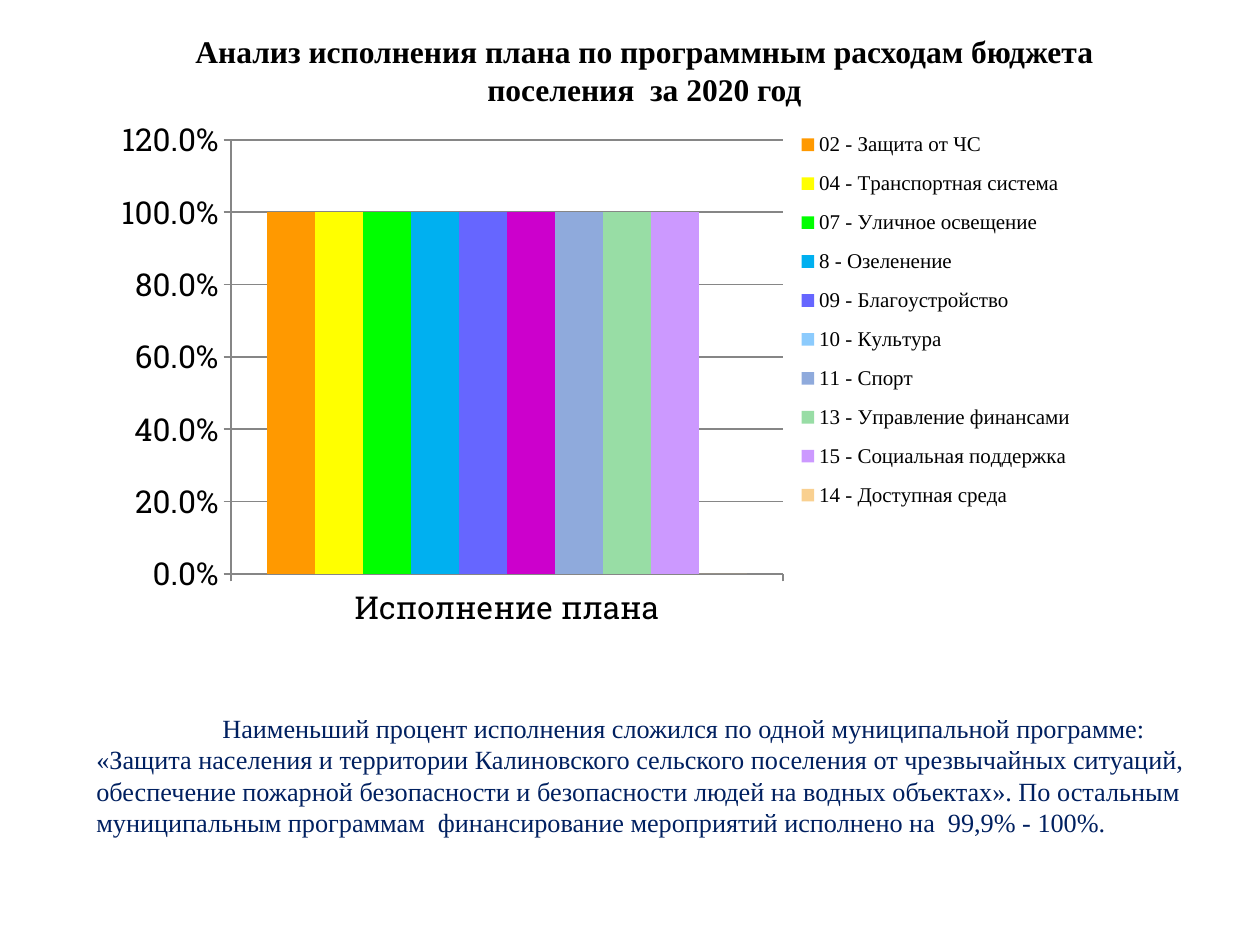
import pptx
import pptx.chart.data
import pptx.dml.color
import pptx.enum.chart
import pptx.enum.text
import pptx.oxml
import pptx.oxml.ns
import pptx.util

PX_PER_INCH = 126
SERIF = "Times New Roman"
SLAB = "Roboto Slab"
COLORS = {"black": "000000", "navy": "002060", "axis": "868686", "culture_bar": "CC00CC"}
CHART_BOX = (82, 116, 1111, 566)
PLOT_BOX = (149, 24, 552, 434)
LEGEND_BOX = (710, 1, 288, 406)
PROGRAMS = [
    ("02 - Защита от ЧС", 1, "FF9900"),
    ("04 - Транспортная система", 1, "FFFF00"),
    ("07 - Уличное освещение", 1, "00FF00"),
    ("8 - Озеленение", 1, "00B0F0"),
    ("09 - Благоустройство", 1, "6666FF"),
    ("10 - Культура", 1, "8CCBFD"),
    ("11 - Спорт", 1, "8FAADC"),
    ("13 - Управление финансами", 1, "98DDA5"),
    ("15 - Социальная поддержка", 1, "CC99FF"),
    ("14 - Доступная среда", 0, "F9D090"),
]
CULTURE = 5
TITLE = "Анализ исполнения плана по программным расходам бюджета поселения  за 2020 год"
SUMMARY = (
    "\tНаименьший процент исполнения сложился по одной муниципальной программе: "
    "«Защита населения и территории Калиновского сельского поселения от чрезвычайных "
    "ситуаций, обеспечение пожарной безопасности и безопасности людей на водных "
    "объектах». По остальным муниципальным программам  финансирование мероприятий "
    "исполнено на  99,9% - 100%."
)


def px(n):
    return round(n * 914400 / PX_PER_INCH)


def rgb(value):
    return pptx.dml.color.RGBColor.from_string(value)


def set_font(font, size, name, color, bold=False):
    font.size = pptx.util.Pt(size)
    font.name = name
    font.bold = bold
    font.color.rgb = rgb(color)


def add_text(slide, box, text, size, color, bold=False, align=None, anchor=None):
    tf = slide.shapes.add_textbox(*map(px, box)).text_frame
    tf.word_wrap = True
    tf.vertical_anchor = anchor
    p = tf.paragraphs[0]
    p.text = text
    p.alignment = align
    set_font(p.font, size, SERIF, color, bold)
    return p


def add_tab_stop(p, position):
    p._p.get_or_add_pPr().insert(0, pptx.oxml.parse_xml(
        f'<a:tabLst {pptx.oxml.ns.nsdecls("a")}><a:tab pos="{px(position)}" algn="l"/></a:tabLst>'
    ))


def make_layout(box, inner=False):
    width, height = CHART_BOX[2:]
    x, y, w, h = (n / total for n, total in zip(box, (width, height) * 2))
    target = '<c:layoutTarget val="inner"/>' if inner else ""
    return pptx.oxml.parse_xml(
        f'<c:layout {pptx.oxml.ns.nsdecls("c")}><c:manualLayout>{target}'
        '<c:xMode val="edge"/><c:yMode val="edge"/>'
        f'<c:x val="{x}"/><c:y val="{y}"/><c:w val="{w}"/><c:h val="{h}"/>'
        "</c:manualLayout></c:layout>"
    )


def remove_layout(element):
    for old in element.findall(pptx.oxml.ns.qn("c:layout")):
        element.remove(old)


def fill_solid(fmt, color):
    fmt.fill.solid()
    fmt.fill.fore_color.rgb = rgb(color)


def style_line(line):
    line.color.rgb = rgb(COLORS["axis"])
    line.width = pptx.util.Pt(1)


def style_axis(axis):
    axis.major_tick_mark = pptx.enum.chart.XL_TICK_MARK.OUTSIDE
    style_line(axis.format.line)


def place_plot(chart):
    area = chart.element.chart.plotArea
    remove_layout(area)
    area.insert(0, make_layout(PLOT_BOX, inner=True))


def add_legend(chart):
    chart.has_legend = True
    legend = chart.legend
    legend.position = pptx.enum.chart.XL_LEGEND_POSITION.RIGHT
    legend.include_in_layout = False
    set_font(legend.font, 12, SERIF, COLORS["black"])
    element = chart.element.chart.find(pptx.oxml.ns.qn("c:legend"))
    remove_layout(element)
    element.find(pptx.oxml.ns.qn("c:legendPos")).addnext(make_layout(LEGEND_BOX))


def add_program_chart(slide):
    data = pptx.chart.data.CategoryChartData(number_format="0.0%")
    data.categories = ["Исполнение плана"]
    for name, value, _ in PROGRAMS:
        data.add_series(name, [value])
    kind = pptx.enum.chart.XL_CHART_TYPE.COLUMN_CLUSTERED
    chart = slide.shapes.add_chart(kind, *map(px, CHART_BOX), data).chart
    chart.has_title = False
    set_font(chart.font, 18, SLAB, COLORS["black"])

    plot = chart.plots[0]
    plot.vary_by_categories = False
    plot.gap_width = 150
    plot.overlap = 0
    for series, (_, _, color) in zip(plot.series, PROGRAMS):
        fill_solid(series.format, color)
    fill_solid(plot.series[CULTURE].points[0].format, COLORS["culture_bar"])

    style_axis(chart.category_axis)
    axis = chart.value_axis
    style_axis(axis)
    axis.minimum_scale, axis.maximum_scale, axis.major_unit = 0, 1.2, 0.2
    axis.tick_labels.number_format = "0.0%"
    axis.tick_labels.number_format_is_linked = False
    style_line(axis.major_gridlines.format.line)

    place_plot(chart)
    add_legend(chart)


def main():
    prs = pptx.Presentation()
    prs.slide_width, prs.slide_height = px(1260), px(945)
    slide = prs.slides.add_slide(prs.slide_layouts[6])
    add_text(slide, (163, 26, 963, 89), TITLE, 18, COLORS["black"], bold=True,
             align=pptx.enum.text.PP_ALIGN.CENTER)
    summary = add_text(slide, (84, 661, 1131, 228), SUMMARY, 15, COLORS["navy"],
                       anchor=pptx.enum.text.MSO_ANCHOR.MIDDLE)
    add_tab_stop(summary, 126)
    add_program_chart(slide)
    prs.save("out.pptx")


if __name__ == "__main__":
    main()
